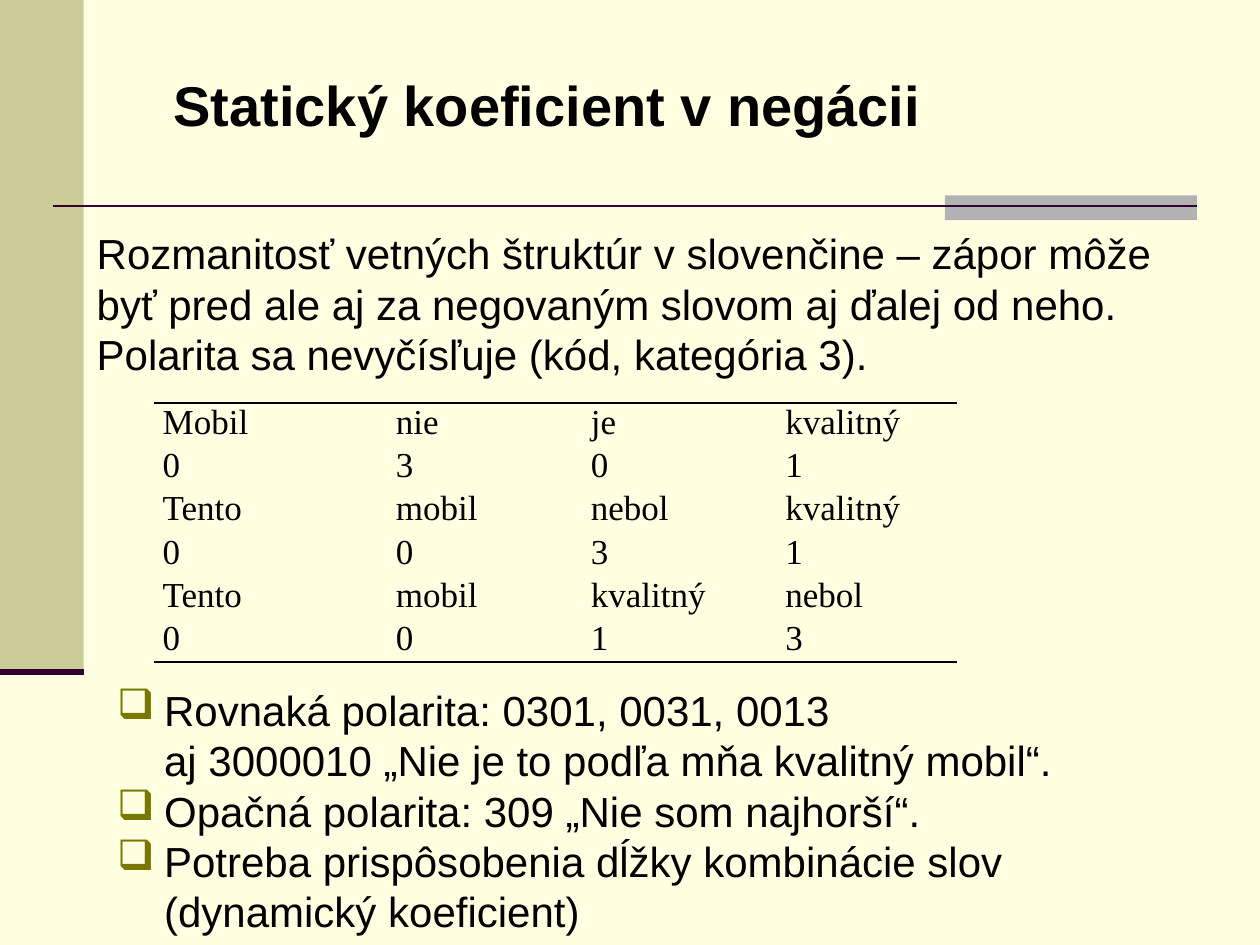
from lxml.etree import SubElement
from pptx import Presentation
from pptx.dml.color import RGBColor
from pptx.enum.shapes import MSO_CONNECTOR, MSO_SHAPE
from pptx.enum.text import MSO_AUTO_SIZE
from pptx.oxml.ns import qn
from pptx.util import Cm, Pt

CREAM = RGBColor(0xFF, 0xFF, 0xE1)
KHAKI = RGBColor(0xCC, 0xCC, 0x99)
GRAY = RGBColor(0xB2, 0xB2, 0xB2)
PLUM = RGBColor(0x33, 0x00, 0x33)
OLIVE = RGBColor(0x78, 0x78, 0x00)
BLACK = RGBColor(0x00, 0x00, 0x00)

ROWS = [
    ("Mobil", "nie", "je", "kvalitný"),
    ("0", "3", "0", "1"),
    ("Tento", "mobil", "nebol", "kvalitný"),
    ("0", "0", "3", "1"),
    ("Tento", "mobil", "kvalitný", "nebol"),
    ("0", "0", "1", "3"),
]
COLUMN_WIDTHS = [4.7, 3.93, 3.92, 3.65]
ROW_HEIGHT = 0.87
NOTES = [
    ("Rovnaká polarita: 0301, 0031, 0013", True),
    ("aj 3000010 „Nie je to podľa mňa kvalitný mobil“.", False),
    ("Opačná polarita: 309 „Nie som najhorší“.", True),
    ("Potreba prispôsobenia dĺžky kombinácie slov (dynamický koeficient)", True),
]


def add_block(slide, left, top, width, height, color):
    shape = slide.shapes.add_shape(
        MSO_SHAPE.RECTANGLE, Cm(left), Cm(top), Cm(width), Cm(height))
    shape.shadow.inherit = False
    shape.fill.solid()
    shape.fill.fore_color.rgb = color
    shape.line.fill.background()


def add_rule(slide, left, right, top, weight):
    rule = slide.shapes.add_connector(
        MSO_CONNECTOR.STRAIGHT, Cm(left), Cm(top), Cm(right), Cm(top))
    rule.line.color.rgb = PLUM
    rule.line.width = Pt(weight)
    SubElement(rule._element.spPr, qn("a:effectLst"))


def set_font(paragraph, size, name="Arial", bold=False):
    font = paragraph.font
    font.name = name
    font.size = Pt(size)
    font.bold = bold
    font.color.rgb = BLACK


def set_bullet(paragraph, bulleted):
    properties = paragraph._p.get_or_add_pPr()
    properties.set("marL", str(Cm(0.95)))
    properties.set("indent", str(Cm(-0.95 if bulleted else 0)))
    if bulleted:
        color = SubElement(properties, qn("a:buClr"))
        SubElement(color, qn("a:srgbClr"), val=str(OLIVE))
        SubElement(properties, qn("a:buChar"), char="❑")


def add_text(slide, left, top, width, height, wrap=True):
    box = slide.shapes.add_textbox(Cm(left), Cm(top), Cm(width), Cm(height))
    frame = box.text_frame
    frame.word_wrap = wrap
    frame.auto_size = MSO_AUTO_SIZE.SHAPE_TO_FIT_TEXT
    return frame


def add_line_of_text(frame, text, size, bold=False):
    paragraph = frame.paragraphs[0]
    paragraph.text = text
    set_font(paragraph, size, bold=bold)


def add_notes(slide):
    frame = add_text(slide, 2.11, 13.67, 22.2, 5.38)
    for index, (text, bulleted) in enumerate(NOTES):
        paragraph = frame.add_paragraph() if index else frame.paragraphs[0]
        paragraph.text = text
        set_bullet(paragraph, bulleted)
        set_font(paragraph, 24)


def set_borders(cell, ruled_sides):
    properties = cell._tc.get_or_add_tcPr()
    for side in ("lnL", "lnR", "lnT", "lnB"):
        line = SubElement(properties, qn(f"a:{side}"), w=str(Pt(1.5)))
        if side in ruled_sides:
            fill = SubElement(line, qn("a:solidFill"))
            SubElement(fill, qn("a:srgbClr"), val=str(BLACK))
        else:
            SubElement(line, qn("a:noFill"))


def fill_cell(cell, text, ruled_sides):
    cell.margin_left = cell.margin_right = Cm(0.18)
    cell.margin_top = cell.margin_bottom = Cm(0)
    set_borders(cell, ruled_sides)
    cell.fill.background()
    paragraph = cell.text_frame.paragraphs[0]
    paragraph.text = text
    set_font(paragraph, 20, "Times New Roman")


def add_word_table(slide):
    table = slide.shapes.add_table(
        len(ROWS), len(COLUMN_WIDTHS), Cm(3.1), Cm(8.13),
        Cm(sum(COLUMN_WIDTHS)), Cm(ROW_HEIGHT * len(ROWS))).table
    table.first_row = False
    table.horz_banding = False
    for column, width in zip(table.columns, COLUMN_WIDTHS):
        column.width = Cm(width)
    ruled = {0: ["lnT"], len(ROWS) - 1: ["lnB"]}
    for index, (row, words) in enumerate(zip(table.rows, ROWS)):
        row.height = Cm(ROW_HEIGHT)
        for cell, word in zip(row.cells, words):
            fill_cell(cell, word, ruled.get(index, []))


def main():
    """Build the slide on the static coefficient in negation."""
    presentation = Presentation()
    presentation.slide_width = Cm(25.4)
    presentation.slide_height = Cm(19.05)
    slide = presentation.slides.add_slide(presentation.slide_layouts[6])
    slide.background.fill.solid()
    slide.background.fill.fore_color.rgb = CREAM

    add_block(slide, 0, 0, 1.69, 13.55, KHAKI)
    add_block(slide, 19.05, 3.94, 5.08, 0.5, GRAY)
    add_rule(slide, 1.06, 24.13, 4.15, 1.5)
    add_rule(slide, 0, 1.69, 13.55, 3.5)

    title = add_text(slide, 3.25, 1.3, 15.7, 1.62, wrap=False)
    add_line_of_text(title, "Statický koeficient v negácii", 32, bold=True)
    introduction = add_text(slide, 1.7, 4.47, 22.2, 3.3)
    add_line_of_text(
        introduction,
        "Rozmanitosť vetných štruktúr v slovenčine – zápor môže byť pred ale "
        "aj za negovaným slovom aj ďalej od neho. Polarita sa nevyčísľuje "
        "(kód, kategória 3).", 24)
    add_word_table(slide)
    add_notes(slide)
    presentation.save("out.pptx")


if __name__ == "__main__":
    main()
